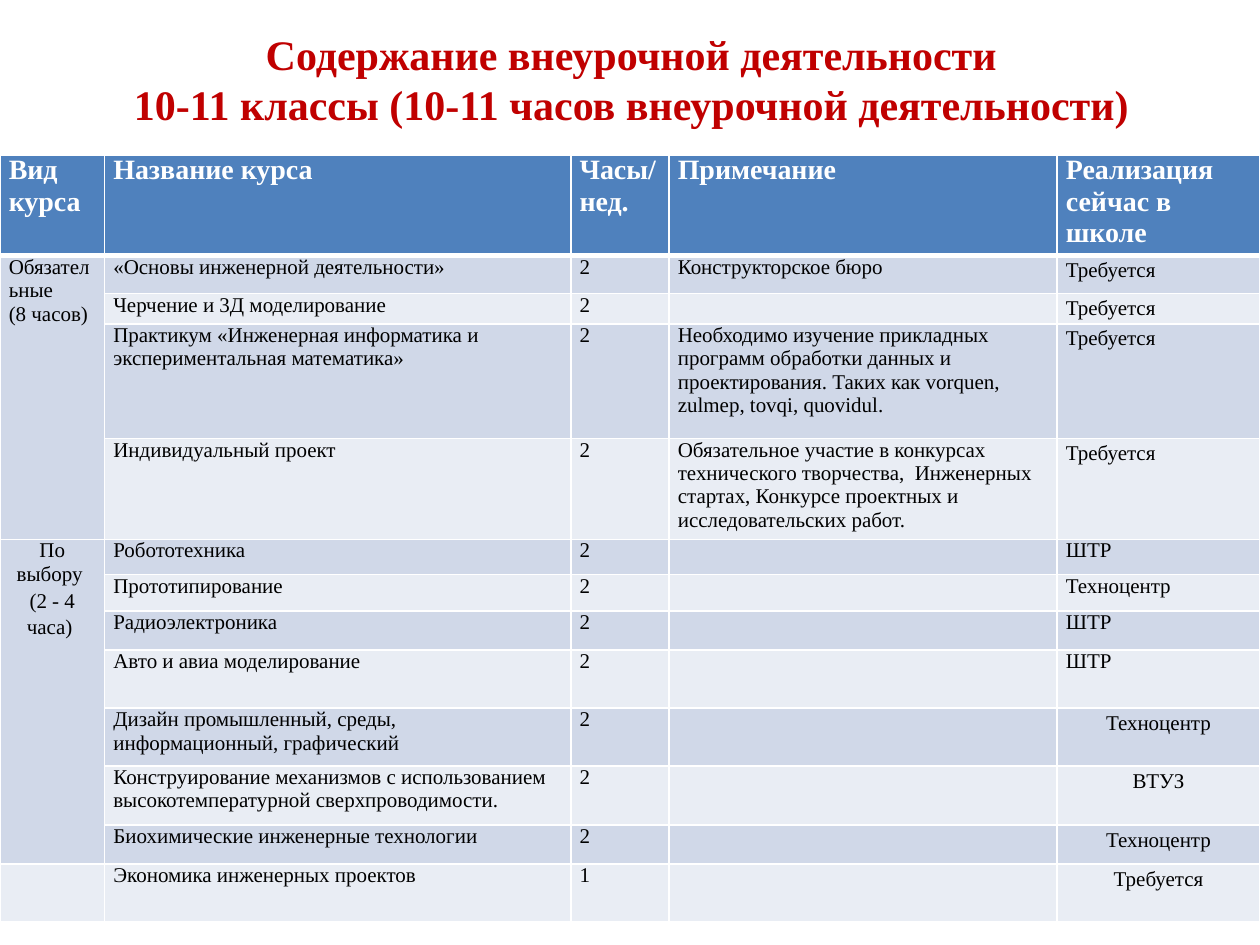
from pptx import Presentation
from pptx import util as u
from pptx.dml import color
from pptx.enum import text
from lxml import etree

FONT = "Times New Roman"
NS = "http://schemas.openxmlformats.org/drawingml/2006/main"
LEFT, CENTER = text.PP_ALIGN.LEFT, text.PP_ALIGN.CENTER


def rgb(value):
    return color.RGBColor.from_string(value)


def add_text(para, words, size, ink, bold=False, align=LEFT, spacing=None):
    para.alignment = align
    if spacing:
        para.line_spacing = spacing
    for number, line in enumerate(words.split("\n")):
        if number:
            para.add_line_break()
        span = para.add_run()
        span.text = line
        span.font.name = FONT
        span.font.size = u.Pt(size)
        span.font.bold = bold
        span.font.color.rgb = rgb(ink)


deck = Presentation()
deck.slide_width, deck.slide_height = u.Inches(10), u.Inches(7.5)
page = deck.slides.add_slide(deck.slide_layouts[6])

# Title
box = page.shapes.add_textbox(u.Inches(0.51), u.Inches(0), u.Inches(9), u.Inches(1.25))
box.text_frame.word_wrap = True
box.text_frame.vertical_anchor = text.MSO_ANCHOR.MIDDLE
add_text(box.text_frame.paragraphs[0],
         "Содержание внеурочной деятельности\n10-11 классы (10-11 часов внеурочной деятельности)",
         24, "C00000", True, CENTER)

# Table content: height, course, hours, note, provider
headings = ["Вид курса", "Название курса", "Часы/нед.", "Примечание", "Реализация сейчас в школе"]
widths = [0.83, 3.7, 0.78, 3.08, 1.61]
courses = [
    (0.3, "«Основы инженерной деятельности»", "2", "Конструкторское бюро", "Требуется"),
    (0.24, "Черчение и 3Д моделирование", "2", "", "Требуется"),
    (0.91, "Практикум «Инженерная информатика и экспериментальная математика»", "2",
     "Необходимо изучение прикладных программ обработки данных и проектирования. "
     "Таких как vorquen, zulmep, tovqi, quovidul.", "Требуется"),
    (0.74, "Индивидуальный проект", "2",
     "Обязательное участие в конкурсах технического творчества,  Инженерных стартах, "
     "Конкурсе проектных и исследовательских работ.", "Требуется"),
    (0.28, "Робототехника", "2", "", "ШТР"),
    (0.29, "Прототипирование", "2", "", "Техноцентр"),
    (0.31, "Радиоэлектроника", "2", "", "ШТР"),
    (0.46, "Авто и авиа моделирование", "2", "", "ШТР"),
    (0.46, "Дизайн промышленный, среды, информационный, графический", "2", "", "Техноцентр"),
    (0.47, "Конструирование механизмов с использованием высокотемпературной сверхпроводимости.",
     "2", "", "ВТУЗ"),
    (0.31, "Биохимические инженерные технологии", "2", "", "Техноцентр"),
    (0.46, "Экономика инженерных проектов", "1", "", "Требуется"),
]
# First row, last row, alignment, paragraphs with their line spacing
groups = [
    (1, 4, LEFT, [("Обязательные", None), ("(8 часов)", None)]),
    (5, 11, CENTER, [("По выбору ", None), ("(2 - 4 часа) ", 1.15)]),
]

heights = [0.77] + [course[0] for course in courses]
frame = page.shapes.add_table(len(heights), len(widths), u.Inches(0), u.Inches(1.23),
                              u.Inches(10), u.Inches(sum(heights)))
table = frame.table
for column, width in zip(table.columns, widths):
    column.width = u.Inches(width)
for row, height in zip(table.rows, heights):
    row.height = u.Inches(height)

# Cell margins, white borders and banded fills
for r in range(len(heights)):
    for c in range(len(widths)):
        cell = table.cell(r, c)
        cell.margin_left = cell.margin_right = u.Inches(0.07)
        cell.margin_top = cell.margin_bottom = 0
        props = cell._tc.get_or_add_tcPr()
        for side in "LRTB":
            thick = (r == 0 and side == "B") or (r == 1 and side == "T")
            line = etree.SubElement(props, f"{{{NS}}}ln{side}", w=str(u.Pt(3 if thick else 1)))
            solid = etree.SubElement(line, f"{{{NS}}}solidFill")
            etree.SubElement(solid, f"{{{NS}}}srgbClr", val="FFFFFF")
        cell.fill.solid()
        cell.fill.fore_color.rgb = rgb("4F81BD" if r == 0 else "D0D8E8" if r % 2 else "E9EDF4")

# Heading row
for c, heading in enumerate(headings):
    add_text(table.cell(0, c).text_frame.paragraphs[0], heading, 16, "FFFFFF", True)

# Course rows
for r, course in enumerate(courses, 1):
    for c, words in enumerate(course[1:], 1):
        para = table.cell(r, c).text_frame.paragraphs[0]
        status = c == 4
        if words:
            add_text(para, words, 12, "000000",
                     align=CENTER if status and r > 8 else LEFT,
                     spacing=1.15 if status and not 5 <= r <= 8 else None)
        else:
            # Keep an empty cell from stretching its row
            etree.SubElement(para._p, f"{{{NS}}}endParaRPr", sz="1200")

# Merged course kinds
for first, last, align, lines in groups:
    cell = table.cell(first, 0)
    cell.merge(table.cell(last, 0))
    for number, (words, spacing) in enumerate(lines):
        body = cell.text_frame
        para = body.add_paragraph() if number else body.paragraphs[0]
        add_text(para, words, 12, "000000", align=align, spacing=spacing)

deck.save("out.pptx")
